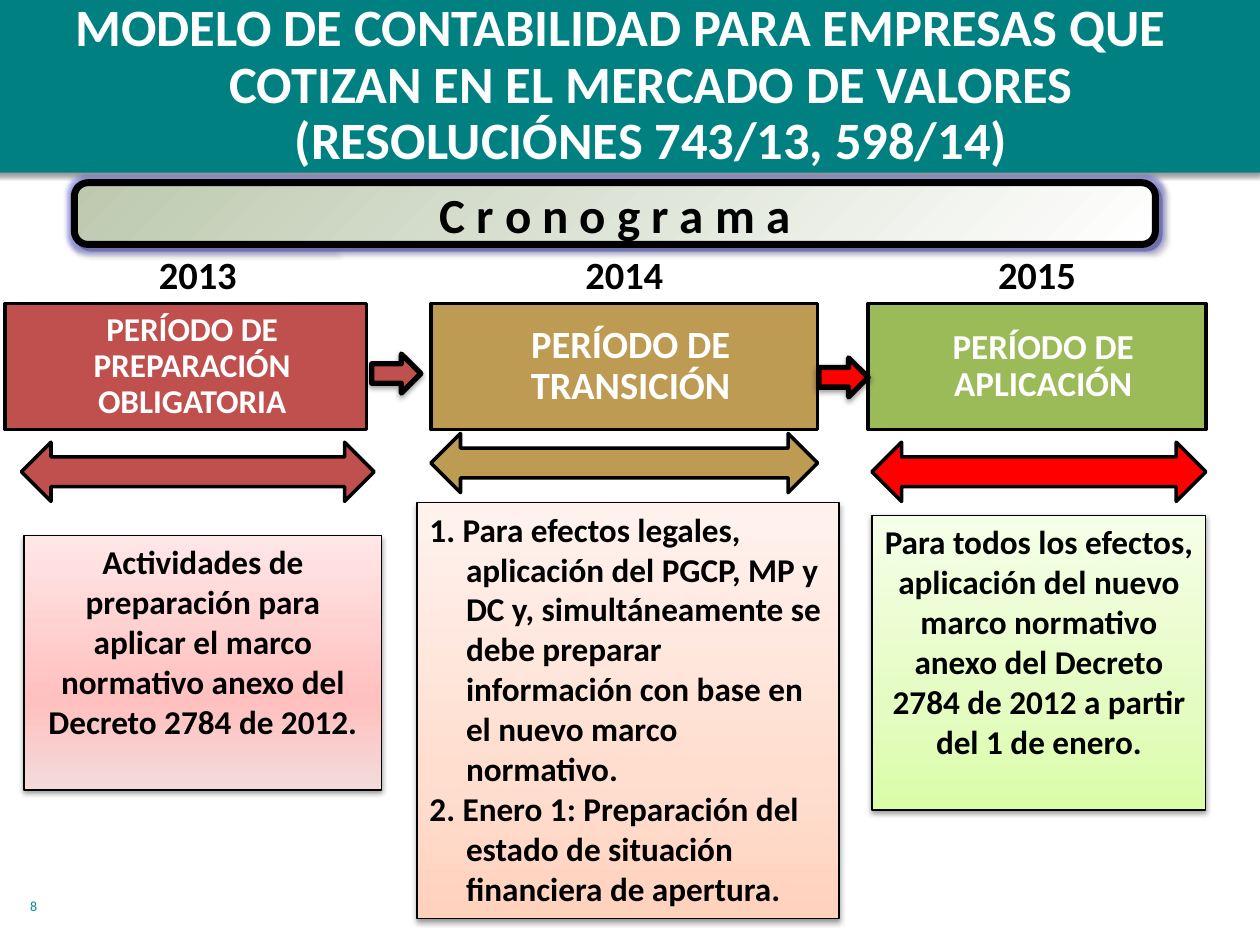
from pptx import Presentation
from pptx.dml.color import RGBColor
from pptx.enum.shapes import MSO_SHAPE as SHAPE
from pptx.enum.text import MSO_ANCHOR as ANCHOR, PP_ALIGN as ALIGN
from pptx.oxml import parse_xml
from pptx.oxml.ns import nsdecls, qn
from pptx.util import Inches, Pt

FONT = "Calibri"
COLORS = {
    "teal": "008080", "number": "00918E", "white": "FFFFFF", "black": "000000",
    "red": "C0504D", "gold": "BD9B53", "green": "9BBB59", "bright": "FF0000",
    "sage": "BDC9AF", "glow": "3333CC",
}
GRADIENTS = {
    "pink": [(0, "F2DCDB"), (35, "FFC0BF"), (100, "FFE7E7")],
    "orange": [(0, "FFD2BD"), (35, "FFDED0"), (100, "FFF2ED")],
    "lime": [(0, "DAFDA7"), (35, "E4FCC2"), (100, "F5FFE7")],
    "banner": [(0, COLORS["sage"]), (100, COLORS["white"])],
}
SOFT_SHADOW = {"alpha": 38, "blur": 3.1, "dist": 1.6, "angle": 90}
BANNER_SHADOW = {"alpha": 40, "blur": 0, "dist": 3, "angle": 45}

# Each part is (left, top, width, height), relative to the column's corner.
COLUMNS = [
    {"left": 0.04, "color": "red", "arrow_color": "red", "note_fill": "pink",
     "year": "2013", "year_box": (0.13, 0, 2.8, 0.47),
     "period": "PERÍODO DE PREPARACIÓN OBLIGATORIA", "period_size": 19, "width": 2.87,
     "arrow_box": (0.13, 1.57, 2.8, 0.47), "note_box": (0.15, 2.31, 2.84, 2.02),
     "note": ["Actividades de preparación para aplicar el marco normativo anexo "
              "del Decreto 2784 de 2012."]},
    {"left": 3.42, "color": "gold", "arrow_color": "gold", "note_fill": "orange",
     "year": "2014", "year_box": (0, 0, 3.07, 0.47),
     "period": "PERÍODO DE TRANSICIÓN", "period_size": 22, "width": 3.07,
     "arrow_box": (0, 1.5, 3.07, 0.47), "note_box": (-0.11, 2.05, 3.35, 3.3),
     "note": ["1. Para efectos legales, aplicación del PGCP, MP y DC y, "
              "simultáneamente se debe preparar información con base en el nuevo "
              "marco normativo.",
              "2. Enero 1: Preparación del estado de situación financiera de apertura."],
     "hanging": 0.29},
    {"left": 6.89, "color": "green", "arrow_color": "bright", "note_fill": "lime",
     "year": "2015", "year_box": (0, 0, 2.68, 0.47),
     "period": "PERÍODO DE APLICACIÓN", "period_size": 20, "width": 2.68,
     "arrow_box": (0.03, 1.57, 2.65, 0.47), "note_box": (0.03, 2.15, 2.65, 2.34),
     "note": ["Para todos los efectos, aplicación del nuevo marco normativo anexo "
              "del Decreto 2784 de 2012 a partir del 1 de enero."]},
]


def rgb(name):
    return RGBColor.from_string(COLORS[name])


def write(sp, paragraphs, size, color="black", bold=True, align=ALIGN.CENTER,
          anchor=ANCHOR.TOP, spacing=None, hanging=None, insets=(0.1, 0.05, 0.1, 0.05)):
    tf = sp.text_frame
    sides = ("left", "top", "right", "bottom")
    frame = {f"margin_{side}": Inches(v) for side, v in zip(sides, insets)}
    frame.update(word_wrap=True, vertical_anchor=anchor)
    for name, value in frame.items():
        setattr(tf, name, value)
    for i, text in enumerate(paragraphs):
        p = tf.add_paragraph() if i else tf.paragraphs[0]
        p.alignment = align
        if spacing:
            p.line_spacing = spacing
        if hanging:
            pPr = p._p.get_or_add_pPr()
            pPr.set("marL", str(Inches(hanging)))
            pPr.set("indent", str(-Inches(hanging)))
        r = p.add_run()
        r.text = text
        for name, value in {"name": FONT, "size": Pt(size), "bold": bold}.items():
            setattr(r.font, name, value)
        r.font.color.rgb = rgb(color)


def add_text(slide, box, text, size, **style):
    write(slide.shapes.add_textbox(*map(Inches, box)), [text], size, **style)


def fill_gradient(sp, stops, angle):
    sp.fill.gradient()
    sp.fill.gradient_angle = angle
    stop_list = sp._element.spPr.find(".//" + qn("a:gsLst"))
    for stop in list(stop_list):
        stop_list.remove(stop)
    for position, color in stops:
        stop_list.append(parse_xml(
            f'<a:gs {nsdecls("a")} pos="{position * 1000}"><a:srgbClr val="{color}"/></a:gs>'))


def add_shadow(sp, alpha, blur, dist, angle):
    sp._element.spPr.find(qn("a:effectLst")).append(parse_xml(
        f'<a:outerShdw {nsdecls("a")} blurRad="{Pt(blur)}" dist="{Pt(dist)}" '
        f'dir="{angle * 60000}" rotWithShape="0"><a:srgbClr val="{COLORS["black"]}">'
        f'<a:alpha val="{alpha * 1000}"/></a:srgbClr></a:outerShdw>'))


def add_glow(sp, radius, color, alpha):
    sp._element.spPr.find(qn("a:effectLst")).append(parse_xml(
        f'<a:glow {nsdecls("a")} rad="{Pt(radius)}"><a:srgbClr val="{COLORS[color]}">'
        f'<a:alpha val="{alpha * 1000}"/></a:srgbClr></a:glow>'))


def add_box(slide, kind, box, fill=None, line=None, gradient=None, angle=90, shadow=None):
    """Add a preset shape; line is the width in points of a black outline."""
    sp = slide.shapes.add_shape(kind, *map(Inches, box))
    sp.shadow.inherit = False
    if gradient:
        fill_gradient(sp, GRADIENTS[gradient], angle)
    else:
        sp.fill.solid()
        sp.fill.fore_color.rgb = rgb(fill)
    if line:
        sp.line.color.rgb = rgb("black")
        sp.line.width = Pt(line)
    else:
        sp.line.fill.background()
    if shadow:
        add_shadow(sp, **shadow)
    return sp


def add_header(slide, left, top, width, height):
    add_box(slide, SHAPE.RECTANGLE, (left, top, width, height), "teal", shadow=SOFT_SHADOW)
    add_text(slide, (left + 0.24, top - 0.01, width - 0.59, height + 0.06),
             "MODELO DE CONTABILIDAD PARA EMPRESAS QUE COTIZAN EN EL MERCADO DE "
             "VALORES (RESOLUCIÓNES 743/13, 598/14)",
             30, color="white", spacing=0.9, hanging=0.49)


def add_banner(slide, *box):
    sp = add_box(slide, SHAPE.ROUNDED_RECTANGLE, box, line=4, gradient="banner", angle=315)
    sp.adjustments[0] = 0.22
    add_glow(sp, 5, "glow", 40)
    add_shadow(sp, **BANNER_SHADOW)
    write(sp, ["C r o n o g r a m a"], 28, anchor=ANCHOR.MIDDLE)


def add_column(slide, left, top, col):
    """Stack the year, period, span arrow and note of one stage."""
    def place(box):
        x, y, w, h = box
        return left + x, top + y, w, h

    period = add_box(slide, SHAPE.RECTANGLE, place((0, 0.47, col["width"], 1)),
                     col["color"], line=2)
    write(period, [col["period"]], col["period_size"], color="white", spacing=0.9,
          anchor=ANCHOR.MIDDLE, insets=(0.62, 0.05, 0.52, 0.05))
    add_text(slide, place(col["year_box"]), col["year"], 22)
    note = add_box(slide, SHAPE.RECTANGLE, place(col["note_box"]), line=0.75,
                   gradient=col["note_fill"], shadow=SOFT_SHADOW)
    hanging = col.get("hanging")
    write(note, col["note"], 19, hanging=hanging,
          align=ALIGN.LEFT if hanging else ALIGN.CENTER)
    add_box(slide, SHAPE.LEFT_RIGHT_ARROW, place(col["arrow_box"]),
            col["arrow_color"], line=2)


def add_step_arrow(slide, left, top, color):
    add_box(slide, SHAPE.RIGHT_ARROW, (left, top, 0.39, 0.31), color, line=3,
            shadow=SOFT_SHADOW)


def main():
    prs = Presentation()
    prs.slide_width, prs.slide_height = Inches(10), Inches(7.5)
    slide = prs.slides.add_slide(prs.slide_layouts[6])
    add_header(slide, -0.04, -0.03, 10.04, 1.4)
    add_text(slide, (0.14, 7.07, 2.08, 0.35), "8", 8, color="number", bold=False,
             align=ALIGN.LEFT)
    add_banner(slide, 0.59, 1.45, 8.58, 0.49)
    for col in COLUMNS:
        add_column(slide, col["left"], 1.94, col)
    add_step_arrow(slide, 2.95, 2.81, "red")
    add_step_arrow(slide, 6.5, 2.84, "bright")
    prs.save("out.pptx")


if __name__ == "__main__":
    main()
